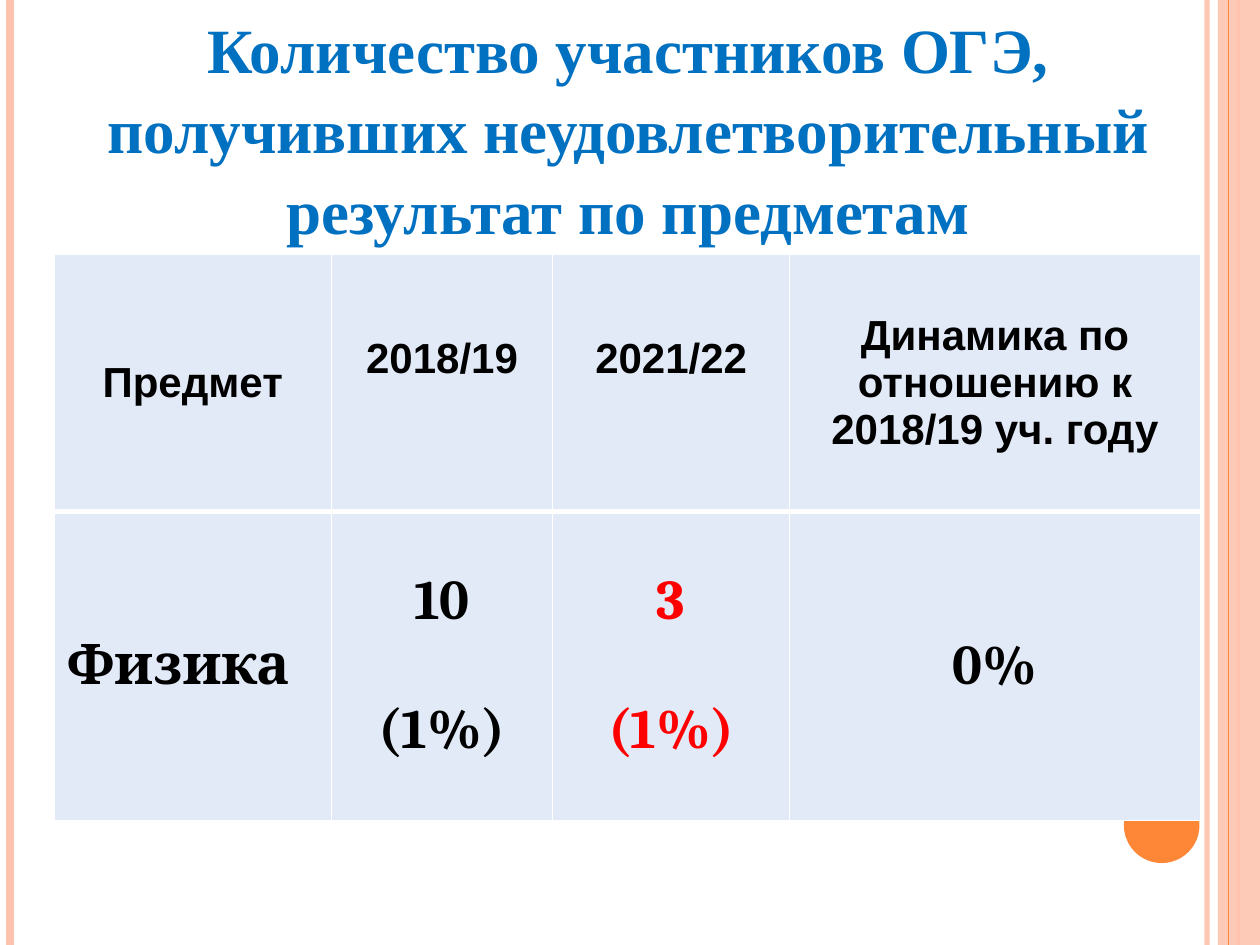
from lxml import etree
from pptx import Presentation
from pptx.dml.color import RGBColor
from pptx.enum.shapes import MSO_CONNECTOR, MSO_SHAPE
from pptx.enum.text import MSO_ANCHOR, PP_ALIGN
from pptx.oxml.ns import qn
from pptx.util import Pt

STRAIGHT = MSO_CONNECTOR.STRAIGHT
RECTANGLE, OVAL = MSO_SHAPE.RECTANGLE, MSO_SHAPE.OVAL
TOP, MIDDLE = MSO_ANCHOR.TOP, MSO_ANCHOR.MIDDLE
LEFT, CENTER = PP_ALIGN.LEFT, PP_ALIGN.CENTER

ORANGE = RGBColor(0xFE, 0x86, 0x37)
PEACH = RGBColor(0xFE, 0xC3, 0xAE)
BLUE = RGBColor(0x00, 0x70, 0xC0)
PALE_BLUE = RGBColor(0xE3, 0xEA, 0xF7)
BLACK = RGBColor(0, 0, 0)
RED = RGBColor(0xFF, 0, 0)

SLIDE_WIDTH, SLIDE_HEIGHT = 720, 540


def set_alpha(fill, percent):
    color = fill._xPr.find(qn("a:solidFill"))[0]
    etree.SubElement(color, qn("a:alpha"), val=str(percent * 1000))


def add_white_borders(cell, widths):
    """Widths are in points, for the left, right, top and bottom sides."""
    properties = cell._tc.get_or_add_tcPr()
    for index, (side, width) in enumerate(zip("LRTB", widths)):
        border = etree.Element(qn(f"a:ln{side}"), w=str(Pt(width)))
        fill = etree.SubElement(border, qn("a:solidFill"))
        etree.SubElement(fill, qn("a:srgbClr"), val="FFFFFF")
        properties.insert(index, border)


prs = Presentation()
prs.slide_width, prs.slide_height = Pt(SLIDE_WIDTH), Pt(SLIDE_HEIGHT)
slide = prs.slides.add_slide(prs.slide_layouts[5])
shapes = slide.shapes

# Side stripes: x, width, colour, opacity
band = shapes.add_shape(RECTANGLE, Pt(696), 0, Pt(24), Pt(SLIDE_HEIGHT))
band.shadow.inherit = False
band.fill.solid()
band.fill.fore_color.rgb = PEACH
set_alpha(band.fill, 87)
band.line.fill.background()

for x, width, color, opacity in [
    (689.76, 3, PEACH, 93),
    (5.76, 4.5, PEACH, 100),
    (707.76, 1.5, PEACH, 100),
    (702, 0.75, ORANGE, 100),
]:
    stripe = shapes.add_connector(STRAIGHT, Pt(x), 0, Pt(x), Pt(SLIDE_HEIGHT))
    stripe.line.width = Pt(width)
    stripe.line.color.rgb = color
    if opacity < 100:
        set_alpha(stripe.line.fill, opacity)
    etree.SubElement(stripe._element.spPr, qn("a:effectLst"))

circle = shapes.add_shape(OVAL, Pt(642.24), Pt(450), Pt(43.2), Pt(43.2))
circle.shadow.inherit = False
circle.fill.solid()
circle.fill.fore_color.rgb = ORANGE
circle.line.fill.background()

# Title
title = shapes.title
title.left, title.top, title.width, title.height = Pt(18.72), 0, Pt(680.4), Pt(138.24)
title.text_frame.text = (
    "Количество участников ОГЭ, получивших неудовлетворительный результат по предметам"
)
title.text_frame.word_wrap = True
title.text_frame.vertical_anchor = TOP
heading = title.text_frame.paragraphs[0]
heading.alignment = CENTER
heading.line_spacing = 1.06
heading.font.name = "Times New Roman"
heading.font.size = Pt(36)
heading.font.bold = True
heading.font.color.rgb = BLUE

# Results table
ROWS = [
    ["Предмет", "2018/19", "2021/22", "Динамика по отношению к 2018/19 уч. году"],
    ["Физика", "10\n(1%)", "3\n(1%)", "0%"],
]
COLUMN_WIDTHS = [158.4, 126.5, 135.4, 234.7]
ROW_HEIGHTS = [146.9, 176.4]
ROW_FONTS = [("Arial", 24), ("Cambria", 32)]
YEAR_COLUMNS = (1, 2)

results = shapes.add_table(
    len(ROWS), len(COLUMN_WIDTHS), Pt(30.96), Pt(145.44),
    Pt(sum(COLUMN_WIDTHS)), Pt(sum(ROW_HEIGHTS)),
).table
for column, width in zip(results.columns, COLUMN_WIDTHS):
    column.width = Pt(width)

for r, (texts, height, (font_name, size)) in enumerate(zip(ROWS, ROW_HEIGHTS, ROW_FONTS)):
    results.rows[r].height = Pt(height)
    for c, text in enumerate(texts):
        cell = results.cell(r, c)
        cell.text = text
        cell.vertical_anchor = MIDDLE
        cell.fill.solid()
        cell.fill.fore_color.rgb = PALE_BLUE
        add_white_borders(cell, (1, 1, 1, 3) if r == 0 else (1, 1, 3, 1))
        if r == 0 and c in YEAR_COLUMNS:
            cell.margin_bottom = Pt(31)  # lifts the years by half a line
        for i, paragraph in enumerate(cell.text_frame.paragraphs):
            paragraph.alignment = LEFT if (r, c) == (1, 0) else CENTER
            paragraph.space_before = Pt(37 if i else 0)
            paragraph.font.name = font_name
            paragraph.font.size = Pt(size)
            paragraph.font.bold = True
            paragraph.font.color.rgb = RED if (r, c) == (1, 2) else BLACK

prs.save("out.pptx")
